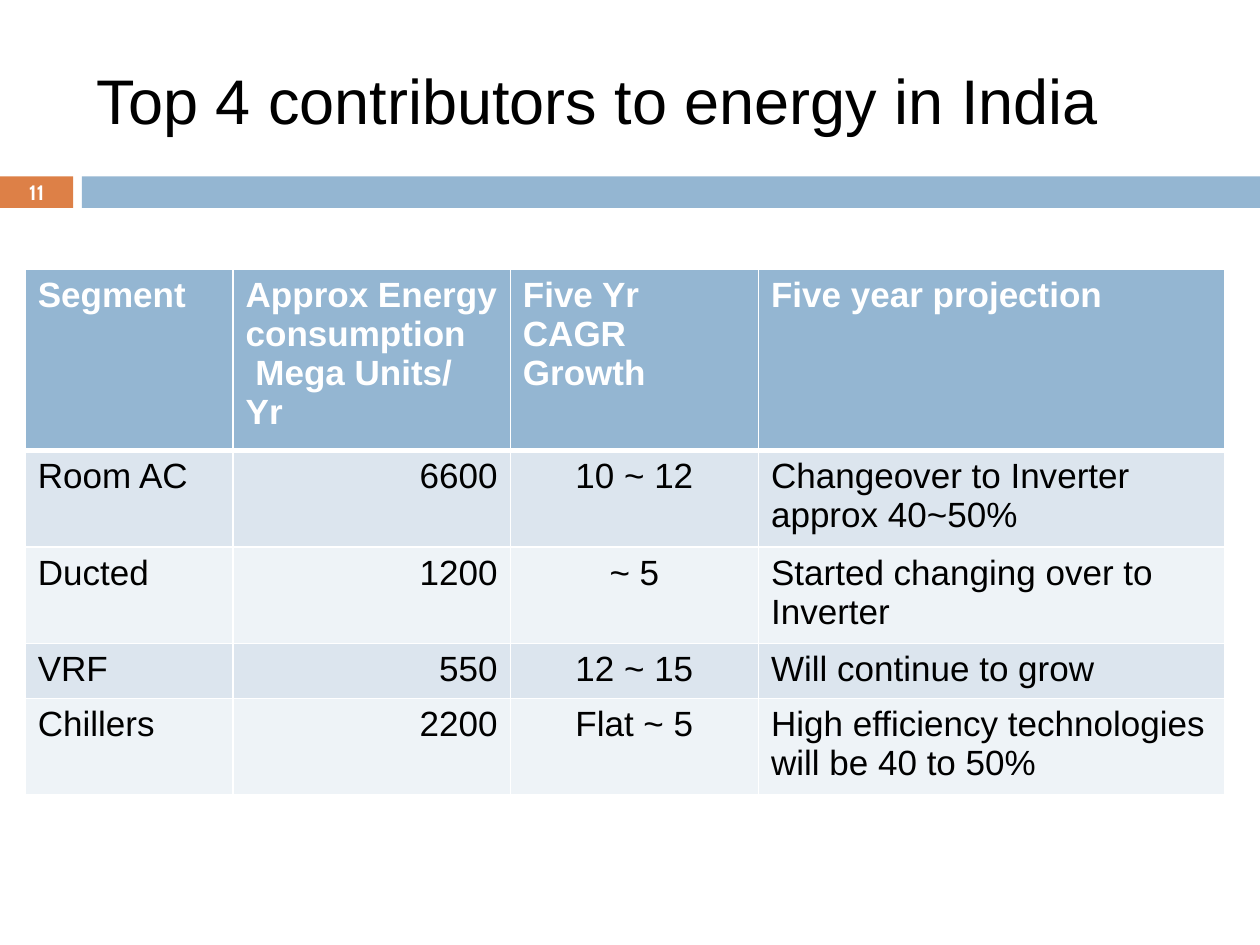
from lxml import etree
from pptx import Presentation
from pptx import util as u
from pptx.dml.color import RGBColor
from pptx.enum import shapes, text
from pptx.oxml.ns import qn

COLORS = {"accent": "DD8047", "blue": "94B6D2", "band": "DCE5EE",
          "light": "EEF3F7", "white": "FFFFFF", "black": "000000"}
HEADER = ["Segment", "Approx Energy consumption\n Mega Units/ Yr",
          "Five Yr CAGR Growth", "Five year projection"]
ROWS = [
    ["Room AC", "6600", "10 ~ 12", "Changeover to Inverter approx 40~50%"],
    ["Ducted", "1200", "~ 5", "Started changing over to Inverter"],
    ["VRF", "550", "12 ~ 15", "Will continue to grow"],
    ["Chillers", "2200", "Flat ~ 5", "High efficiency technologies will be 40 to 50%"],
]
COL_WIDTHS = [1.65, 2.2, 1.97, 3.7]
ROW_HEIGHTS = [1.34, 0.72, 0.72, 0.41, 0.72]
ALIGN = [text.PP_ALIGN.LEFT, text.PP_ALIGN.RIGHT, text.PP_ALIGN.CENTER, text.PP_ALIGN.LEFT]


def rgb(name):
    return RGBColor.from_string(COLORS[name])


def write(tf, content, size, color, bold=False, font="Arial", align=text.PP_ALIGN.LEFT):
    tf.text = content
    tf.word_wrap = True
    for p in tf.paragraphs:
        p.alignment = align
        for r in p.runs:
            r.font.name, r.font.size, r.font.bold = font, u.Pt(size), bold
            r.font.color.rgb = rgb(color)


def add_title(s, x, y, w, h):
    tf = s.shapes.add_textbox(x, y, w, h).text_frame
    write(tf, "Top 4 contributors to energy in India", 36, "black")
    tf.vertical_anchor = text.MSO_ANCHOR.MIDDLE


def add_bar(s, x, y, w, h, color):
    sp = s.shapes.add_shape(shapes.MSO_SHAPE.RECTANGLE, x, y, w, h)
    sp.shadow.inherit = False
    sp.fill.solid()
    sp.fill.fore_color.rgb = rgb(color)
    sp.line.fill.background()
    return sp


def add_number_band(s, x, y, w, h):
    """Slide number tag, then a bar that fills the remaining width."""
    tag_w, gap = u.Inches(0.58), u.Inches(0.07)
    tf = add_bar(s, x, y, tag_w, h, "accent").text_frame
    tf.margin_top = tf.margin_bottom = 0
    tf.vertical_anchor = text.MSO_ANCHOR.MIDDLE
    write(tf, "11", 11.9, "white", True, "Cabin", text.PP_ALIGN.CENTER)
    add_bar(s, x + tag_w + gap, y, w - tag_w - gap, h, "blue")


def set_borders(cell, top, bottom):
    """White borders: 1 pt at the sides, the given points above and below."""
    tc_pr = cell._tc.get_or_add_tcPr()
    edges = {"lnL": 1, "lnR": 1, "lnT": top, "lnB": bottom}
    for i, (tag, width) in enumerate(edges.items()):
        ln = etree.Element(qn(f"a:{tag}"), w=str(u.Pt(width)))
        fill = etree.SubElement(ln, qn("a:solidFill"))
        etree.SubElement(fill, qn("a:srgbClr"), val=COLORS["white"])
        tc_pr.insert(i, ln)


def add_segment_table(s, x, y, w, h):
    data = [HEADER] + ROWS
    table = s.shapes.add_table(len(data), len(HEADER), x, y, w, h).table
    for col, width in zip(table.columns, COL_WIDTHS):
        col.width = int(w * width / sum(COL_WIDTHS))
    for row, height in zip(table.rows, ROW_HEIGHTS):
        row.height = int(h * height / sum(ROW_HEIGHTS))
    for i, values in enumerate(data):
        head = i == 0
        fill = "blue" if head else ("band" if i % 2 else "light")
        for j, value in enumerate(values):
            cell = table.cell(i, j)
            cell.fill.solid()
            cell.fill.fore_color.rgb = rgb(fill)
            write(cell.text_frame, value, 20, "white" if head else "black", head,
                  align=ALIGN[0] if head else ALIGN[j])
            set_borders(cell, 3 if i == 1 else 1, 3 if head else 1)


def main():
    prs = Presentation()
    prs.slide_width, prs.slide_height = u.Inches(10), u.Inches(7.5)
    s = prs.slides.add_slide(prs.slide_layouts[6])
    add_number_band(s, 0, u.Inches(1.4), prs.slide_width, u.Inches(0.25))
    add_title(s, u.Inches(0.67), u.Inches(0.25), u.Inches(8.92), u.Inches(1.08))
    add_segment_table(s, u.Inches(0.2), u.Inches(2.14),
                      u.Inches(sum(COL_WIDTHS)), u.Inches(sum(ROW_HEIGHTS)))
    prs.save("out.pptx")


if __name__ == "__main__":
    main()
